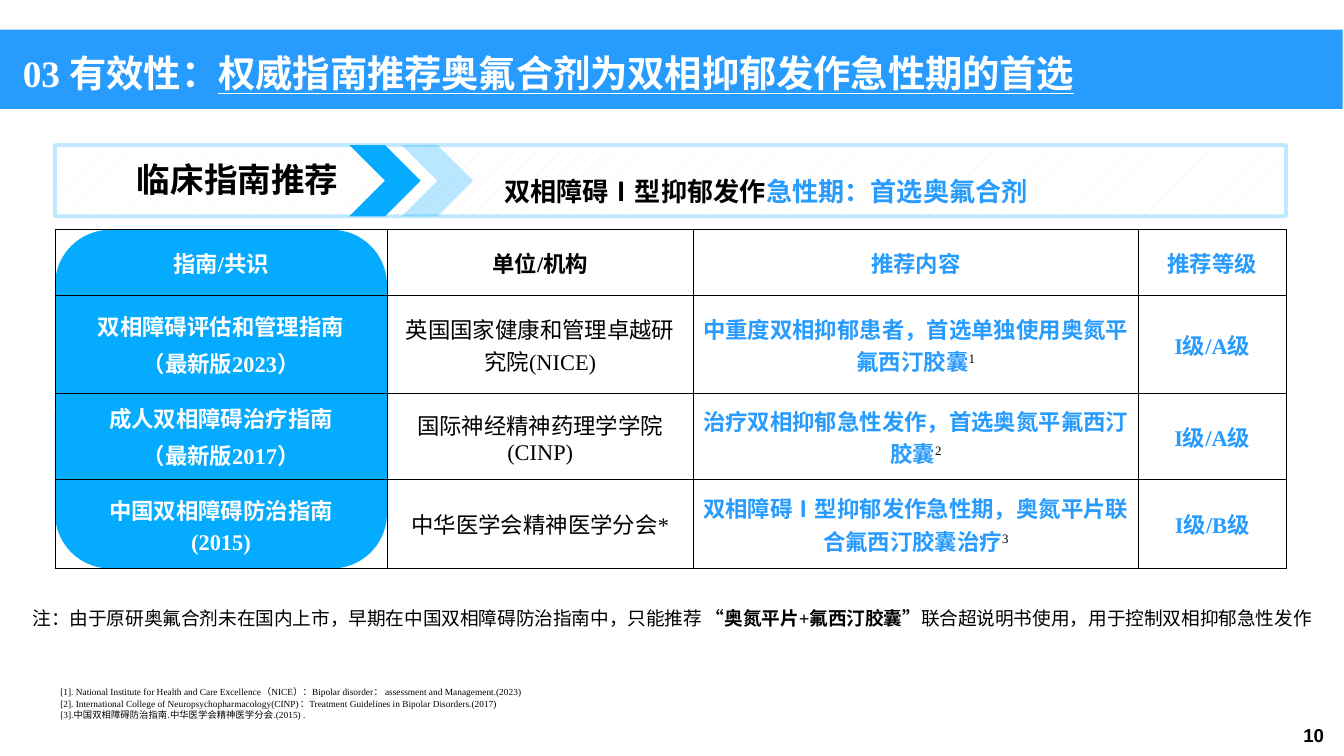
from dataclasses import dataclass

from lxml.etree import SubElement
from pptx import Presentation
from pptx.dml.color import RGBColor
from pptx.enum.dml import MSO_PATTERN
from pptx.enum.lang import MSO_LANGUAGE_ID as Language
from pptx.enum.shapes import MSO_SHAPE as Shape
from pptx.enum.text import MSO_ANCHOR as Anchor, MSO_AUTO_SIZE as AutoSize, PP_ALIGN as Align
from pptx.oxml import parse_xml
from pptx.oxml.ns import nsdecls, qn
from pptx.util import Pt

PX = 9144  # EMU in one px, 100 px to the inch
WHITE = RGBColor(0xFF, 0xFF, 0xFF)
BLACK = RGBColor(0, 0, 0)
PALE_GREY = RGBColor(0xF2, 0xF2, 0xF2)
BLUE = RGBColor(0x27, 0x9B, 0xFE)
SKY = RGBColor(0x04, 0xAB, 0xFF)
SERIF = "Times New Roman"
SANS = "Noto Sans CJK SC"


@dataclass(frozen=True)
class Box:
    left: int
    top: int
    width: int
    height: int

    def emu(self) -> tuple[int, ...]:
        return tuple(n * PX for n in (self.left, self.top, self.width, self.height))


@dataclass(frozen=True)
class Span:
    text: str
    size: float
    color: RGBColor = BLACK
    bold: bool = False
    font: str = SERIF
    underline: bool = False
    spacing: int = 0
    baseline: int = 0


@dataclass(frozen=True)
class Guideline:
    names: tuple[str, str]
    body: str
    advice: str
    grade: str


def write(frame, lines: list[list[Span]], align=Align.LEFT, spacing=None, before=0) -> None:
    """Fill a text frame, one list of spans for each paragraph."""
    for index, spans in enumerate(lines):
        para = frame.add_paragraph() if index else frame.paragraphs[0]
        para.alignment = align
        para.space_before = Pt(before)
        if spacing:
            para.line_spacing = spacing
        for span in spans:
            run = para.add_run()
            run.text = span.text
            font = run.font
            font.name, font.size, font.bold = span.font, Pt(span.size), span.bold
            font.underline = span.underline
            font.color.rgb = span.color
            font.language_id = Language.SIMPLIFIED_CHINESE
            properties = font._element
            if span.spacing:
                properties.set("spc", str(span.spacing))
            if span.baseline:
                properties.set("baseline", str(span.baseline))
            east_asian = parse_xml(f'<a:ea {nsdecls("a")} typeface="{SANS}"/>')
            properties.find(qn("a:latin")).addnext(east_asian)


def add_text(page, box: Box, lines: list[list[Span]], indent: int = 10, **style):
    frame = page.shapes.add_textbox(*box.emu()).text_frame
    frame.word_wrap = True
    frame.margin_left = indent * PX
    write(frame, lines, **style)
    return frame


def set_alpha(fill, percent: int) -> None:
    color = fill._xPr.find(qn("a:solidFill"))[0]
    SubElement(color, qn("a:alpha")).set("val", str(percent * 1000))


def add_panel(page, kind, box: Box, color: RGBColor):
    panel = page.shapes.add_shape(kind, *box.emu())
    panel.shadow.inherit = False
    panel.fill.solid()
    panel.fill.fore_color.rgb = color
    panel.line.fill.background()
    return panel


def format_cell(cell, lines: list[list[Span]], sides: int = 4, ends: int = 0, before=0) -> None:
    """Write a see-through, centred cell with thin black borders."""
    properties = cell._tc.get_or_add_tcPr()
    for side in ("lnL", "lnR", "lnT", "lnB"):
        properties.append(parse_xml(
            f'<a:{side} {nsdecls("a")} w="6350"><a:solidFill>'
            f'<a:srgbClr val="{BLACK}"/></a:solidFill></a:{side}>'))
    cell.fill.background()
    cell.vertical_anchor = Anchor.MIDDLE
    cell.margin_left = cell.margin_right = sides * PX
    cell.margin_top = cell.margin_bottom = ends * PX
    write(cell.text_frame, lines, align=Align.CENTER, before=before)


def add_guidelines(page, box: Box, widths: list[int], heights: list[int],
                   guidelines: list[Guideline]) -> None:
    table = page.shapes.add_table(len(heights), len(widths), *box.emu()).table
    table.first_row = table.horz_banding = False
    for column, width in zip(table.columns, widths):
        column.width = width * PX
    for row, height in zip(table.rows, heights):
        row.height = height * PX
    headings = [("指南/共识", WHITE), ("单位/机构", BLACK), ("推荐内容", BLUE), ("推荐等级", BLUE)]
    for column, (text, color) in enumerate(headings):
        format_cell(table.cell(0, column), [[Span(text, 12, color, True)]])
    for row, item in enumerate(guidelines, 1):
        names = [[Span(name, 12, WHITE, True)] for name in item.names]
        advice = [Span(item.advice, 12, BLUE, True), Span(str(row), 12, baseline=30000)]
        format_cell(table.cell(row, 0), names, 7, 4, before=2.4)
        format_cell(table.cell(row, 1), [[Span(item.body, 12)]], 7, 4)
        format_cell(table.cell(row, 2), [advice])
        format_cell(table.cell(row, 3), [[Span(item.grade, 12, BLUE, True)]])


def main() -> None:
    deck = Presentation()
    deck.slide_width = 1000 * PX
    deck.slide_height = deck.slide_width * 9 // 16
    page = deck.slides.add_slide(deck.slide_layouts[5])

    # Page number and title band
    number = add_text(page, Box(956, 532, 43, 30),
                      [[Span("10", 10, bold=True, font="Arial")]], align=Align.CENTER)
    number.vertical_anchor = Anchor.MIDDLE
    add_panel(page, Shape.RECTANGLE, Box(0, 22, 999, 59), BLUE)

    # Banner frame and backing of the first table column
    table_box = Box(41, 171, 916, 252)
    widths = [247, 228, 331, 110]
    frame = add_panel(page, Shape.RECTANGLE, Box(41, 108, 916, 53), WHITE)
    frame.fill.patterned()
    frame.fill.pattern = MSO_PATTERN.PERCENT_20
    frame.fill.fore_color.rgb, frame.fill.back_color.rgb = PALE_GREY, WHITE
    frame.line.color.rgb, frame.line.width = SKY, Pt(2)
    set_alpha(frame.line.fill, 25)
    add_panel(page, Shape.ROUNDED_RECTANGLE,
              Box(table_box.left, table_box.top, widths[0], table_box.height), SKY)

    # Title, raised above its band
    title = page.shapes.title
    title.left, title.top, title.width, title.height = Box(0, 14, 894, 62).emu()
    title.text_frame.auto_size = AutoSize.NONE
    title.text_frame.vertical_anchor = Anchor.BOTTOM
    title.text_frame.margin_left = 17 * PX
    write(title.text_frame, [[
        Span("03 有效性", 20, WHITE, True, spacing=-10),
        Span("：", 20, WHITE, True),
        Span("权威指南推荐奥氟合剂为双相抑郁发作急性期的首选", 20, WHITE, True,
             underline=True, spacing=-10)]])
    title._element.getparent().append(title._element)

    # References
    references = [
        "[1]. National Institute for Health and Care Excellence（NICE）：Bipolar disorder："
        " assessment and Management.(2023)",
        "[2]. International College of Neuropsychopharmacology(CINP)：Treatment Guidelines"
        " in Bipolar Disorders.(2017)",
        "[3].中国双相障碍防治指南.中华医学会精神医学分会.(2015) ."]
    add_text(page, Box(35, 506, 591, 35), [[Span(text, 5)] for text in references])

    # Banner text and chevrons
    add_text(page, Box(352, 114, 602, 41), [[
        Span("双相障碍Ⅰ型抑郁发作", 14, bold=True),
        Span("急性期：首选奥氟合剂", 14, BLUE, True)]], indent=23, spacing=1.5)
    add_text(page, Box(92, 113, 176, 40), [[Span("临床指南推荐", 18, bold=True, font=SANS)]])
    add_panel(page, Shape.CHEVRON, Box(260, 108, 53, 53), SKY)
    set_alpha(add_panel(page, Shape.CHEVRON, Box(299, 108, 53, 53), SKY).fill, 28)

    # Note below the table
    add_text(page, Box(12, 438, 976, 32), [[
        Span("注：由于原研奥氟合剂未在国内上市，早期在中国双相障碍防治指南中，只能推荐 ", 10),
        Span("“奥氮平片+氟西汀胶囊”", 10, bold=True),
        Span("联合超说明书使用，用于控制双相抑郁急性发作", 10)]],
        align=Align.CENTER, spacing=1.5)

    # Guideline table
    add_guidelines(page, table_box, widths, [49, 73, 64, 66], [
        Guideline(("双相障碍评估和管理指南", "（最新版2023）"), "英国国家健康和管理卓越研究院(NICE)",
                  "中重度双相抑郁患者，首选单独使用奥氮平氟西汀胶囊", "I级/A级"),
        Guideline(("成人双相障碍治疗指南", "（最新版2017）"), "国际神经精神药理学学院(CINP)",
                  "治疗双相抑郁急性发作，首选奥氮平氟西汀胶囊", "I级/A级"),
        Guideline(("中国双相障碍防治指南", "(2015)"), "中华医学会精神医学分会*",
                  "双相障碍Ⅰ型抑郁发作急性期，奥氮平片联合氟西汀胶囊治疗", "I级/B级")])

    deck.save("out.pptx")


if __name__ == "__main__":
    main()
